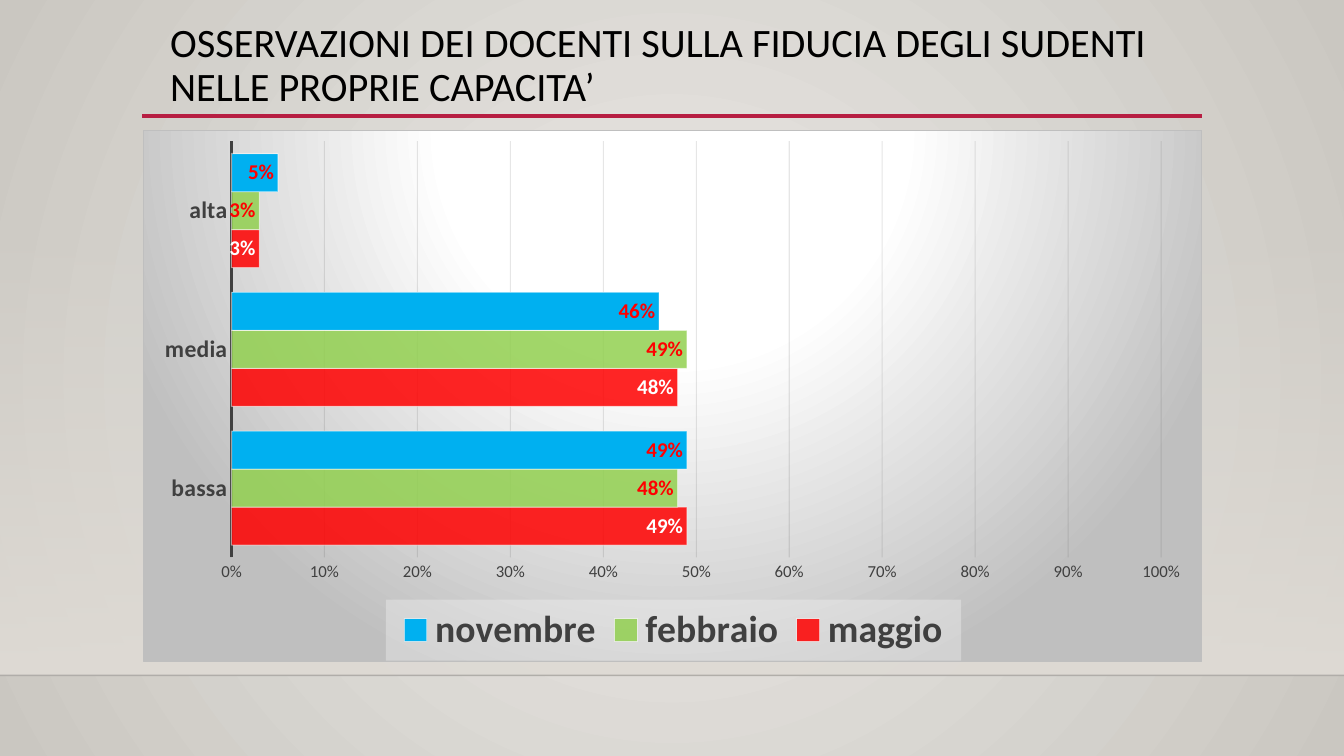
from pptx import Presentation
from pptx.chart.data import CategoryChartData
from pptx.dml.color import RGBColor
from pptx.enum.chart import XL_CHART_TYPE as ChartType, XL_LABEL_POSITION as LabelPos
from pptx.enum.chart import XL_LEGEND_POSITION as LegendPos, XL_TICK_MARK as Tick
from pptx.enum.shapes import MSO_CONNECTOR as Connector, MSO_SHAPE as Preset
from pptx.oxml import parse_xml
from pptx.oxml.ns import nsdecls
from pptx.util import Inches, Pt


def color(value):
    return RGBColor.from_string(value)


def set_alpha(clr, percent):
    clr.append(parse_xml(f'<a:alpha {nsdecls("a")} val="{percent * 1000}"/>'))


def gradient(stops, direction):
    marks = "".join(
        f'<a:gs pos="{pos * 1000}"><a:srgbClr val="{value}"><a:alpha val="{alpha * 1000}"/></a:srgbClr></a:gs>'
        for pos, value, alpha in stops)
    return parse_xml(f'<a:gradFill {nsdecls("a")} rotWithShape="1"><a:gsLst>{marks}</a:gsLst>{direction}</a:gradFill>')


def circle(left, top, right, bottom):
    return (f'<a:path path="circle"><a:fillToRect l="{left * 1000}" t="{top * 1000}" '
            f'r="{right * 1000}" b="{bottom * 1000}"/></a:path>')


def swap(old, new):
    old.getparent().replace(old, new)


def set_layout(left, top, width, height, inner=False):
    target = '<c:layoutTarget val="inner"/>' if inner else ""
    return parse_xml(
        f'<c:layout {nsdecls("c")}><c:manualLayout>{target}<c:xMode val="edge"/><c:yMode val="edge"/>'
        f'<c:x val="{left}"/><c:y val="{top}"/><c:w val="{width}"/><c:h val="{height}"/>'
        '</c:manualLayout></c:layout>')


def area_format(fill, line=None):
    props = parse_xml(f'<c:spPr {nsdecls("c", "a")}/>')
    props.append(fill)
    edge = f'<a:solidFill><a:srgbClr val="{line}"/></a:solidFill>' if line else "<a:noFill/>"
    props.append(parse_xml(f'<a:ln {nsdecls("a")} w="9525">{edge}</a:ln>'))
    return props


class SlideBuilder:
    face = "Calibri"
    gray = "404040"

    def __init__(self, deck):
        self.page = deck.slides.add_slide(deck.slide_layouts[6])

    def font(self, font, size, value=gray, bold=False):
        font.name, font.size, font.bold = self.face, Pt(size), bold
        font.color.rgb = color(value)

    def stroke(self, line, value, width):
        line.color.rgb = color(value)
        line.width = Pt(width)

    def background(self, stops, direction):
        self.page.background.fill.solid()
        swap(self.page.element.xpath(".//p:bgPr/a:solidFill")[0], gradient(stops, direction))

    def band(self, left, top, width, height, stops, direction):
        shape = self.page.shapes.add_shape(
            Preset.RECTANGLE, Inches(left), Inches(top), Inches(width), Inches(height))
        shape.shadow.inherit = False
        shape.line.fill.background()
        shape.fill.solid()
        swap(shape.element.xpath("./p:spPr/a:solidFill")[0], gradient(stops, direction))

    def rule(self, left, right, top, value, width, alpha=100):
        line = self.page.shapes.add_connector(
            Connector.STRAIGHT, Inches(left), Inches(top), Inches(right), Inches(top))
        self.stroke(line.line, value, width)
        set_alpha(line.element.xpath(".//a:ln//a:srgbClr")[0], alpha)
        line.element.spPr.append(parse_xml(f'<a:effectLst {nsdecls("a")}/>'))

    def text(self, words, left, top, width, height, size, value="000000", spacing=1.0):
        box = self.page.shapes.add_textbox(Inches(left), Inches(top), Inches(width), Inches(height))
        box.text_frame.word_wrap = True
        para = box.text_frame.paragraphs[0]
        para.line_spacing = spacing
        span = para.add_run()
        span.text = words
        self.font(span.font, size, value)

    def bar_chart(self, left, top, width, height, categories, rows):
        data = CategoryChartData(number_format="0%")
        data.categories = categories
        for name, values, *_ in rows:
            data.add_series(name, values)
        chart = self.page.shapes.add_chart(
            ChartType.BAR_CLUSTERED, Inches(left), Inches(top), Inches(width), Inches(height), data).chart
        self.font(chart.font, 10, "000000")
        chart.has_title = False
        plot = chart.plots[0]
        plot.gap_width = 65
        plot.vary_by_categories = False
        for series, (_, _, value, alpha, label) in zip(plot.series, rows):
            self.bars(series, value, alpha, label)
        self.axes(chart)
        self.legend(chart)
        stops = [(0, "FFFFFF", 100), (39, "FFFFFF", 100), (100, "BFBFBF", 100)]
        chart.element.xpath("./c:txPr")[0].addprevious(
            area_format(gradient(stops, circle(50, -80, 50, 180)), "BFBFBF"))
        area = chart.element.xpath(".//c:plotArea")[0]
        for old in area.xpath("./c:layout"):
            area.remove(old)
        area.insert(0, set_layout(0.083, 0.02, 0.879, 0.784, inner=True))

    def bars(self, series, value, alpha, label):
        series.format.fill.solid()
        series.format.fill.fore_color.rgb = color(value)
        self.stroke(series.format.line, "FFFFFF", 0.75)
        fill, edge = series._element.xpath("./c:spPr//a:srgbClr")
        set_alpha(fill, alpha)
        set_alpha(edge, 50)
        labels = series.data_labels
        labels.show_value = True
        labels.position = LabelPos.INSIDE_END
        labels.number_format = "0%"
        labels.number_format_is_linked = False
        self.font(labels.font, 15, label, True)

    def axes(self, chart):
        names, values = chart.category_axis, chart.value_axis
        for axis in (names, values):
            axis.major_tick_mark = axis.minor_tick_mark = Tick.NONE
        self.font(names.tick_labels.font, 16.9, bold=True)
        self.stroke(names.format.line, self.gray, 1.5)
        self.font(values.tick_labels.font, 12)
        values.format.line.fill.background()
        values.minimum_scale, values.maximum_scale, values.major_unit = 0, 1, 0.1
        values.tick_labels.number_format = "0%"
        values.tick_labels.number_format_is_linked = False
        values.has_major_gridlines = True
        self.stroke(values.major_gridlines.format.line, "0D0D0D", 0.75)
        set_alpha(chart.element.xpath(".//c:majorGridlines//a:srgbClr")[0], 10)

    def legend(self, chart):
        chart.has_legend = True
        legend = chart.legend
        legend.position = LegendPos.BOTTOM
        legend.include_in_layout = False
        self.font(legend.font, 26.9, bold=True)
        element = chart.element.xpath(".//c:legend")[0]
        for old in element.xpath("./c:layout"):
            element.remove(old)
        element.xpath("./c:overlay")[0].addprevious(set_layout(0.229, 0.883, 0.544, 0.115))
        fill = parse_xml(f'<a:solidFill {nsdecls("a")}><a:srgbClr val="F2F2F2"/></a:solidFill>')
        set_alpha(fill[0], 39)
        element.xpath("./c:txPr")[0].addprevious(area_format(fill))


def main():
    deck = Presentation()
    deck.slide_width, deck.slide_height = Inches(13.33), Inches(7.5)
    slide = SlideBuilder(deck)
    slide.background([(0, "ECEAE7", 100), (100, "CAC7C1", 100)], circle(50, 50, 50, 50))
    slide.band(0, 2.21, 13.33, 4.49, [(0, "DFDBD5", 0), (100, "DFDBD5", 100)],
               '<a:lin ang="5400000" scaled="0"/>')
    slide.rule(0, 13.33, 6.7, "000001", 1, alpha=20)
    slide.rule(1.41, 11.92, 1.15, "B71E42", 2.5)
    slide.text("OSSERVAZIONI DEI DOCENTI SULLA FIDUCIA DEGLI SUDENTI NELLE PROPRIE CAPACITA’",
               1.59, 0.18, 10.76, 0.64, size=28.8, spacing=0.9)
    slide.bar_chart(1.42, 1.29, 10.5, 5.28, ["bassa", "media", "alta"], [
        ("maggio", [0.49, 0.48, 0.03], "FF0000", 85, "FFFFFF"),
        ("febbraio", [0.48, 0.49, 0.03], "92D050", 85, "FF0000"),
        ("novembre", [0.49, 0.46, 0.05], "00B0F0", 100, "FF0000"),
    ])
    deck.save("out.pptx")


if __name__ == "__main__":
    main()
